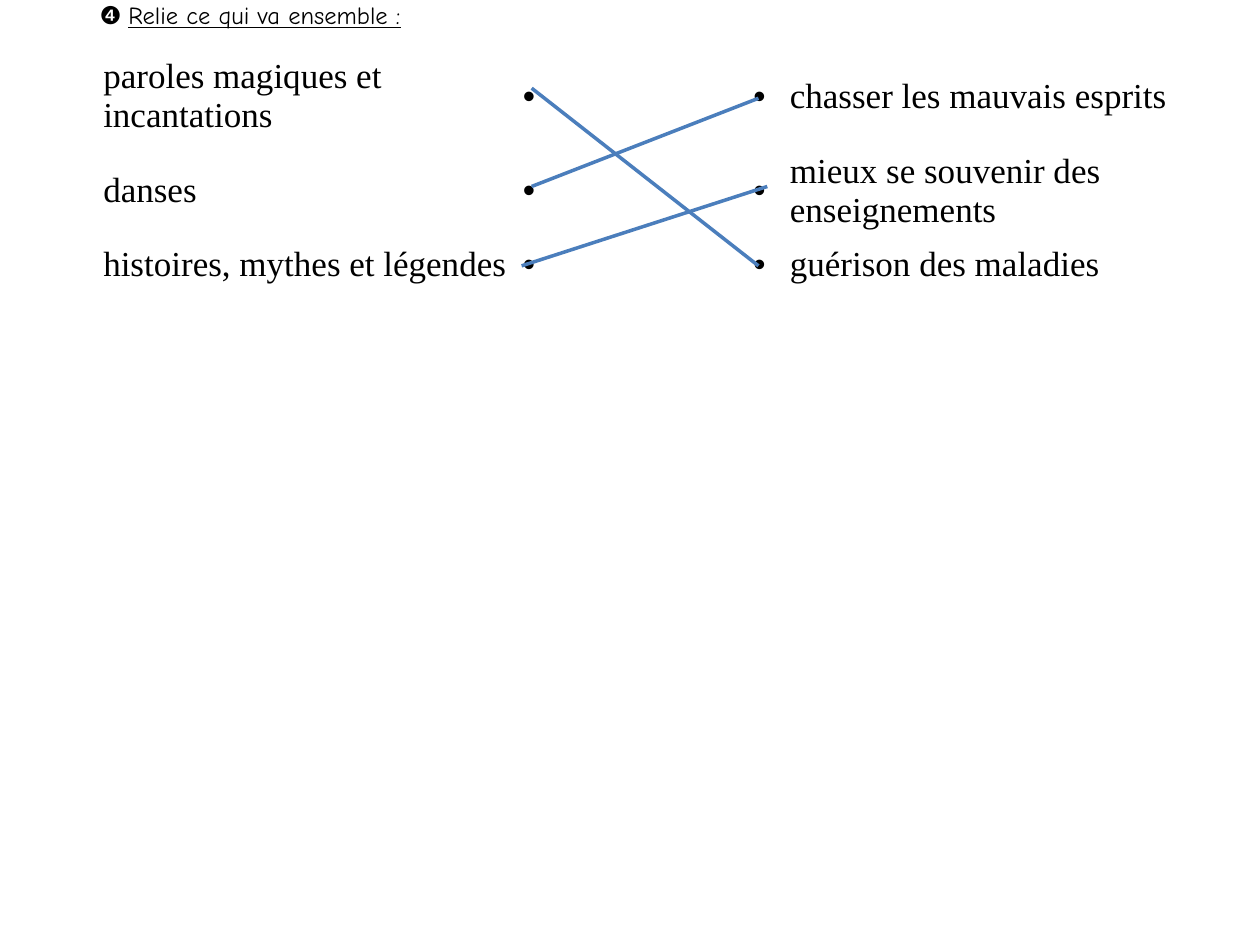
from lxml import etree
from pptx import Presentation
from pptx.dml.color import RGBColor
from pptx.enum.shapes import MSO_CONNECTOR
from pptx.enum.text import MSO_ANCHOR
from pptx.oxml.ns import qn
from pptx.util import Inches, Pt

STRAIGHT = MSO_CONNECTOR.STRAIGHT
TOP, MIDDLE = MSO_ANCHOR.TOP, MSO_ANCHOR.MIDDLE
COLORS = {"text": "000000", "link": "4B7EBC"}
BULLET = "•"

PAIRS = [
    ("paroles magiques et incantations", "chasser les mauvais esprits"),
    ("danses", "mieux se souvenir des enseignements"),
    ("histoires, mythes et légendes", "guérison des maladies"),
]
COL_WIDTHS = [3.33, 0.31, 1.52, 0.29, 3.77]
ROW_HEIGHTS = [0.75, 0.74, 0.42]
LINKS = [
    ((4.22, 0.7), (6.02, 2.11)),
    ((4.22, 1.48), (6.02, 0.78)),
    ((4.14, 2.11), (6.09, 1.48)),
]


class Worksheet:
    body_font, symbol_font, title_font = "Times New Roman", "Arial", "Comic Neue"

    def __init__(self, slide):
        self.s = slide

    def color(self, name):
        return RGBColor.from_string(COLORS[name])

    def title(self, number, text):
        sp = self.s.shapes.add_textbox(0, 0, Inches(10), Inches(0.4))
        tf = sp.text_frame
        tf.word_wrap = True
        tf.vertical_anchor = TOP
        tf.margin_left = Inches(0.79)
        tf.margin_top = tf.margin_right = tf.margin_bottom = 0
        p = tf.paragraphs[0]
        p.font.size = Pt(14)
        p.font.color.rgb = self.color("text")
        r = p.add_run()
        r.text = number + " "
        r.font.name = self.symbol_font
        r = p.add_run()
        r.text = text
        r.font.name = self.title_font
        r.font.underline = True

    def cell(self, cell, text):
        cell.fill.background()
        cell.vertical_anchor = MIDDLE
        cell.margin_left = cell.margin_right = Inches(0.04)
        cell.margin_top = cell.margin_bottom = Inches(0.04)
        if not text:
            return
        cell.text = text
        font = cell.text_frame.paragraphs[0].font
        font.name = self.symbol_font if text == BULLET else self.body_font
        font.size = Pt(20)
        font.color.rgb = self.color("text")

    def matching_table(self, left, top, pairs):
        frame = self.s.shapes.add_table(
            len(pairs), len(COL_WIDTHS), Inches(left), Inches(top),
            Inches(sum(COL_WIDTHS)), Inches(sum(ROW_HEIGHTS)))
        table = frame.table
        table.first_row = table.horz_banding = False
        for column, width in zip(table.columns, COL_WIDTHS):
            column.width = Inches(width)
        for row, height, (term, purpose) in zip(table.rows, ROW_HEIGHTS, pairs):
            row.height = Inches(height)
            for cell, text in zip(row.cells, (term, BULLET, "", BULLET, purpose)):
                self.cell(cell, text)

    def link(self, start, end):
        line = self.s.shapes.add_connector(
            STRAIGHT, *(Inches(v) for v in (*start, *end)))
        line.line.color.rgb = self.color("link")
        line.line.width = Pt(2)
        etree.SubElement(line._element.spPr, qn("a:effectLst"))


def main():
    prs = Presentation()
    prs.slide_width, prs.slide_height = Inches(10), Inches(7.5)
    sheet = Worksheet(prs.slides.add_slide(prs.slide_layouts[6]))
    sheet.title("❹", "Relie ce qui va ensemble :")
    sheet.matching_table(0.78, 0.39, PAIRS)
    for start, end in LINKS:
        sheet.link(start, end)
    prs.save("out.pptx")


if __name__ == "__main__":
    main()
